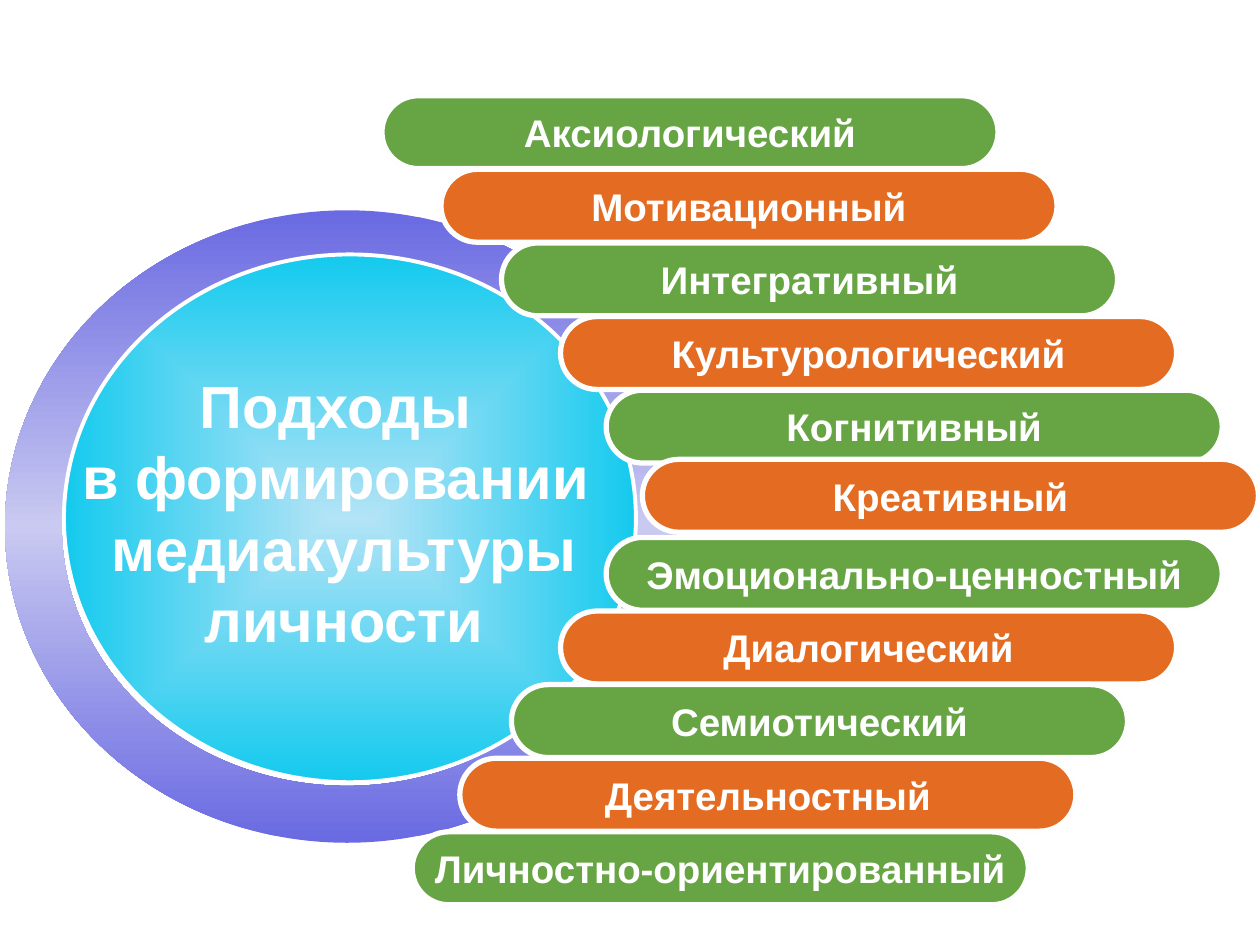
from dataclasses import dataclass
from pptx import Presentation
from pptx.dml.color import RGBColor as RGB
from pptx.enum.shapes import MSO_SHAPE as Kind
from pptx.enum.text import MSO_ANCHOR as Anchor, MSO_AUTO_SIZE as Fit, PP_ALIGN as Align
from pptx.oxml import parse_xml
from pptx.oxml.ns import nsdecls, qn
from pptx.util import Cm, Pt


@dataclass(frozen=True)
class Theme:
    """Colours, font and sizes of the slide."""
    font: str = "Arial"
    white: str = "FFFFFF"
    edge: str = "FEFEFE"
    bars: tuple = ("66A444", "E46C22")
    ring: tuple = ((0, "6A6AE2"), (50, "C9C9F1"), (100, "6A6AE2"))
    disc: tuple = ((0, "B2E3F6"), (100, "14CAEE"))
    title: int = 34
    label: int = 22


THEME = Theme()
TITLE = ("Подходы ", "в формировании ", "медиакультуры", "личности")
BARS = (
    ("Аксиологический", 0, 0),
    ("Мотивационный", 1.19, 0),
    ("Интегративный", 2.41, 0),
    ("Культурологический", 3.6, 0),
    ("Когнитивный", 4.52, 0),
    ("Креативный", 5.25, -0.09),
    ("Эмоционально-ценностный", 4.52, 0),
    ("Диалогический", 3.6, 0),
    ("Семиотический", 2.61, 0),
    ("Деятельностный", 1.57, 0),
    ("Личностно-ориентированный", 0.61, 0),
)


def style(item, values):
    """Set each named attribute of an item."""
    for name, value in values.items():
        setattr(item, name, value)


def add(slide, kind, box, edge=None, width=0):
    """Add a preset shape without shadow, outlined if an edge is given."""
    shape = slide.shapes.add_shape(kind, *map(Cm, box))
    shape.shadow.inherit = False
    if edge:
        shape.line.color.rgb = RGB.from_string(edge)
        shape.line.width = Pt(width)
    else:
        shape.line.fill.background()
    return shape


def blend(shape, stops, way):
    """Fill a shape with a gradient of given stops and direction."""
    shape.fill.gradient()
    props = shape._element.spPr
    marks = "".join(
        f'<a:gs pos="{pos * 1000}"><a:srgbClr val="{tint}"/></a:gs>' for pos, tint in stops)
    fill = parse_xml(
        f'<a:gradFill {nsdecls("a")} rotWithShape="1"><a:gsLst>{marks}</a:gsLst>{way}</a:gradFill>')
    props.replace(props.find(qn("a:gradFill")), fill)


def write(shape, lines, size, **frame):
    """Write centred bold white lines and return their runs."""
    text = shape.text_frame
    style(text, {"word_wrap": False, **frame})
    text.text = "\n".join(lines)
    runs = []
    for para in text.paragraphs:
        para.alignment = Align.CENTER
        run = para.runs[0]
        run.font.color.rgb = RGB.from_string(THEME.white)
        style(run.font, {"name": THEME.font, "size": Pt(size), "bold": True})
        runs.append(run)
    return runs


def shade(run):
    """Give a run a hard black shadow."""
    effect = parse_xml(
        f'<a:effectLst {nsdecls("a")}><a:outerShdw dist="35921" dir="2700000" algn="ctr">'
        '<a:srgbClr val="000000"/></a:outerShdw></a:effectLst>')
    run.font._element.find(qn("a:solidFill")).addnext(effect)


def draw_disc(slide, box):
    """Draw the ring, the inner disc and the title."""
    left, top, width, height = box
    ring = add(slide, Kind.DONUT, box)
    ring.adjustments[0] = 0.09
    blend(ring, THEME.ring, '<a:lin ang="5400000" scaled="1"/>')

    disc = add(slide, Kind.OVAL, (left + 1.19, top + 0.89, width - 2.26, height - 2.11),
               THEME.white, 2.25)
    blend(disc, THEME.disc, '<a:path path="shape">'
          '<a:fillToRect l="50000" t="50000" r="50000" b="50000"/></a:path>')

    area = (left + 1.27, top + 3.07, 11.13, 5.99)
    title = slide.shapes.add_textbox(*map(Cm, area))
    for run in write(title, TITLE, THEME.title, auto_size=Fit.SHAPE_TO_FIT_TEXT):
        shade(run)


def draw_bars(slide, box):
    """Draw the fan of labelled bars, evenly spread down the box."""
    left, top, _, height = box
    wide, high = 12.42, 1.47
    pitch = (height - high) / (len(BARS) - 1)
    for row, (label, shift, nudge) in enumerate(BARS):
        place = (left + shift, top + row * pitch + nudge, wide, high)
        bar = add(slide, Kind.ROUNDED_RECTANGLE, place, THEME.edge, 3)
        bar.adjustments[0] = 0.5
        bar.fill.solid()
        bar.fill.fore_color.rgb = RGB.from_string(THEME.bars[row % 2])
        write(bar, (label,), THEME.label, vertical_anchor=Anchor.MIDDLE)


def main():
    """Build and save the slide."""
    deck = Presentation()
    style(deck, {"slide_width": Cm(25.4), "slide_height": Cm(19.05)})
    slide = deck.slides.add_slide(deck.slide_layouts[6])
    draw_disc(slide, (0.1, 4.24, 13.79, 12.75))
    draw_bars(slide, (7.7, 1.93, 17.67, 16.31))
    deck.save("out.pptx")


if __name__ == "__main__":
    main()
